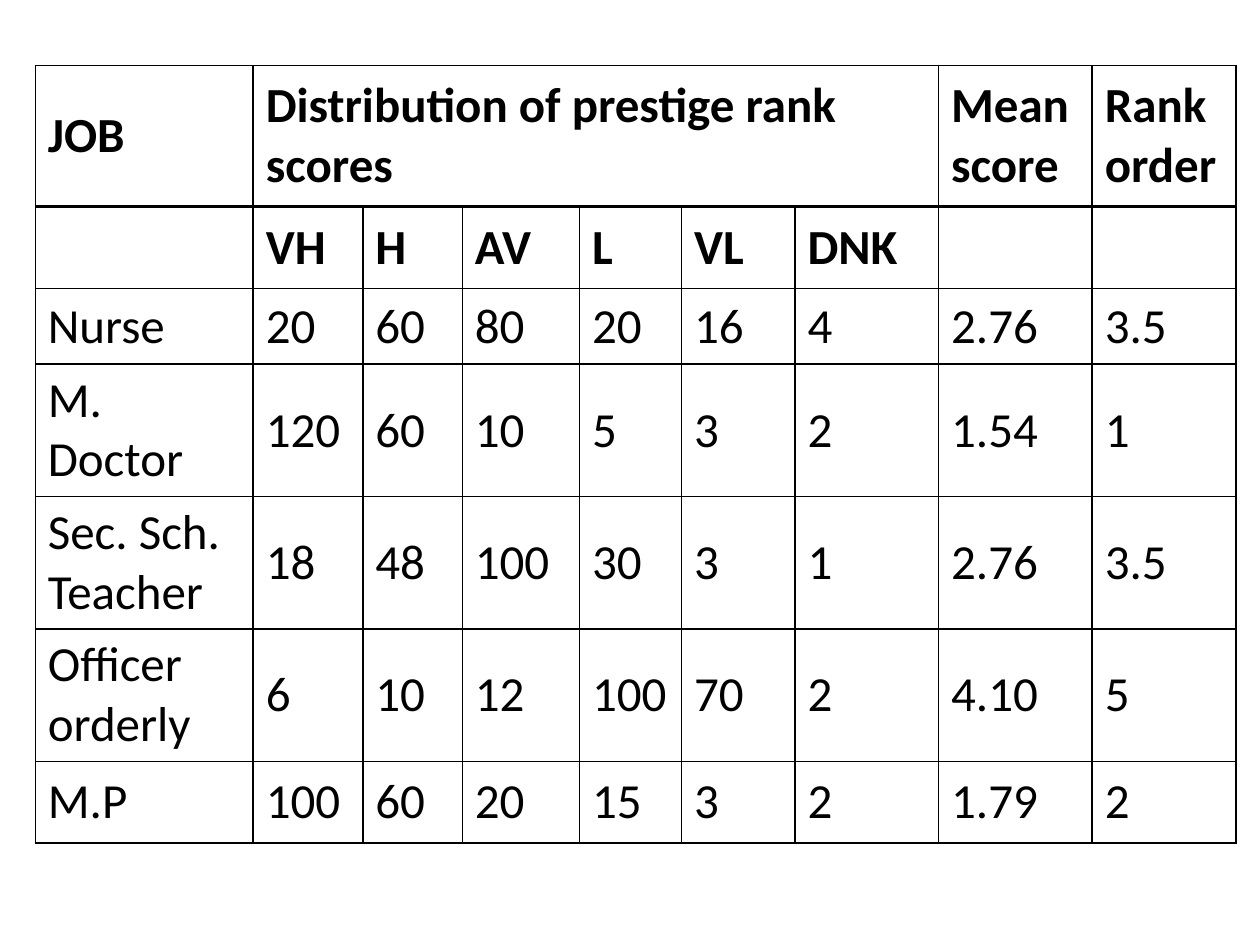
import pptx
import pptx.util
import pptx.dml.color
import pptx.enum.text
import pptx.oxml
import pptx.oxml.ns
from pptx.util import Inches


def color(code):
    return pptx.dml.color.RGBColor.from_string(code)


def write(cell, text, size=28, bold=False, font="Calibri", ink="000000"):
    cell.vertical_anchor = pptx.enum.text.MSO_ANCHOR.MIDDLE
    run = cell.text_frame.paragraphs[0].add_run()
    run.text = text
    run.font.size = pptx.util.Pt(size)
    run.font.bold = bold
    run.font.name = font
    run.font.color.rgb = color(ink)


deck = pptx.Presentation()
deck.slide_width, deck.slide_height = Inches(10), Inches(7.5)
slide = deck.slides.add_slide(deck.slide_layouts[6])

# Scores by job; None marks a cell covered by the wide heading
rows = [
    ["JOB", "Distribution of prestige rank scores", None, None, None, None, None,
     "Mean score", "Rank order"],
    ["", "VH", "H", "AV", "L", "VL", "DNK", "", ""],
    ["Nurse", "20", "60", "80", "20", "16", "4", "2.76", "3.5"],
    ["M. Doctor", "120", "60", "10", "5", "3", "2", "1.54", "1"],
    ["Sec. Sch. Teacher", "18", "48", "100", "30", "3", "1", "2.76", "3.5"],
    ["Officer orderly", "6", "10", "12", "100", "70", "2", "4.10", "5"],
    ["M.P", "100", "60", "20", "15", "3", "2", "1.79", "2"],
]
widths = [1.73, 0.87, 0.79, 0.93, 0.81, 0.9, 1.14, 1.22, 1.14]
heights = [1.12, 0.65, 0.6, 0.65, 0.65, 0.65, 0.65]

# Table grid
frame = slide.shapes.add_table(len(rows), len(widths), Inches(0.28), Inches(0.52),
                               Inches(sum(widths)), Inches(sum(heights)))
table = frame.table
table.first_row = table.horz_banding = False
for col, width in zip(table.columns, widths):
    col.width = Inches(width)
for row, height in zip(table.rows, heights):
    row.height = Inches(height)
table.cell(0, 1).merge(table.cell(0, 6))

# Cells: borders, fill and text, with a thicker rule under the header
for r, row in enumerate(rows):
    for c, text in enumerate(row):
        cell = table.cell(r, c)
        props = cell._tc.get_or_add_tcPr()
        for side in "LRTB":
            thick = (r, side) in [(0, "B"), (1, "T")]
            props.append(pptx.oxml.parse_xml(
                f'<a:ln{side} {pptx.oxml.ns.nsdecls("a")} w="{25400 if thick else 12700}">'
                '<a:solidFill><a:srgbClr val="000000"/></a:solidFill>'
                f'</a:ln{side}>'))
        cell.fill.solid()
        cell.fill.fore_color.rgb = color("FFFFFF")
        if text:
            write(cell, text, bold=r < 2)

deck.save("out.pptx")
